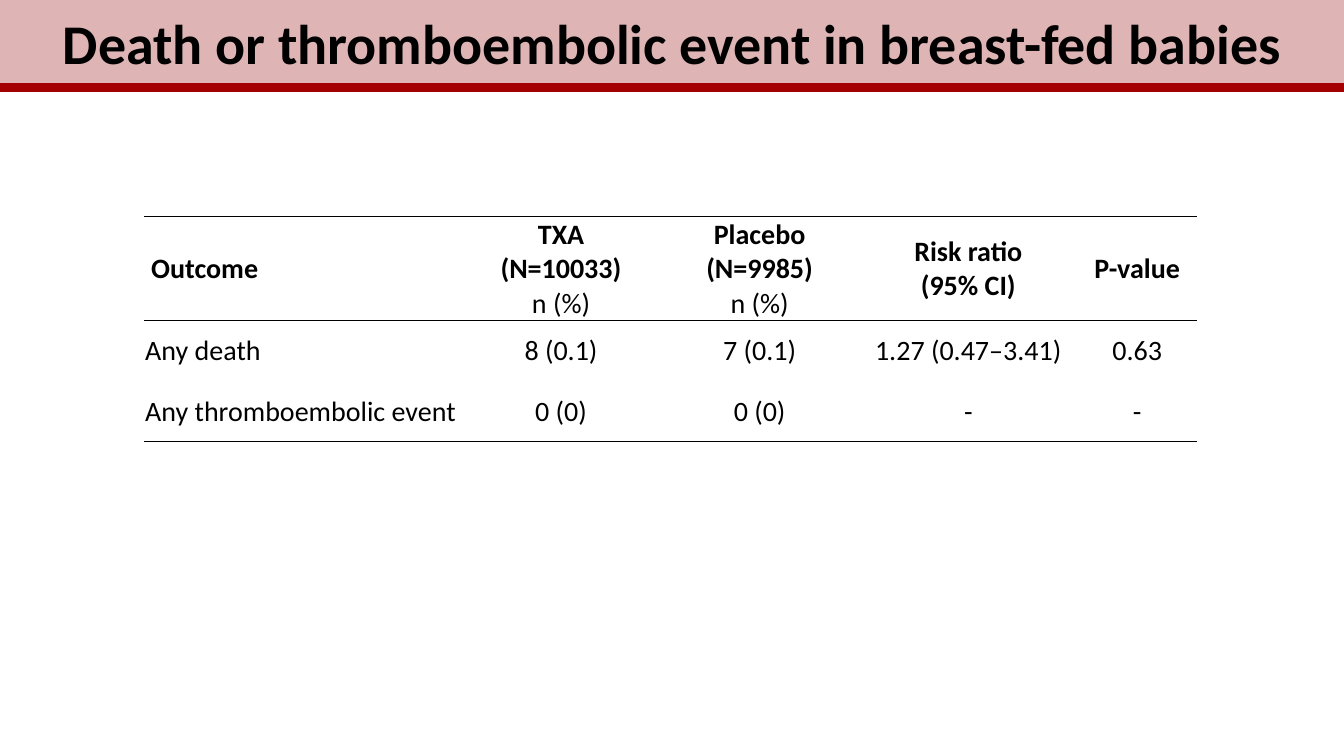
"""Build the slide on death or thromboembolic events in breast-fed babies."""
import lxml.etree
import pptx
import pptx.dml.color
import pptx.enum.shapes
import pptx.enum.text
import pptx.oxml.ns
import pptx.util

Inches = pptx.util.Inches
Pt = pptx.util.Pt
qn = pptx.oxml.ns.qn
ALIGN = pptx.enum.text.PP_ALIGN
MIDDLE = pptx.enum.text.MSO_ANCHOR.MIDDLE
COLORS = {"text": "000000", "banner": "DEB4B4", "rule": "A40000"}


def color(name):
    return pptx.dml.color.RGBColor.from_string(COLORS[name])


def add_text(para, text, size, bold, align):
    para.alignment = align
    span = para.add_run()
    span.text = text
    span.font.name = "Calibri"
    span.font.size = Pt(size)
    span.font.bold = bold
    span.font.color.rgb = color("text")


deck = pptx.Presentation()
deck.slide_width = Inches(13.33)
deck.slide_height = Inches(7.5)
page = deck.slides.add_slide(deck.slide_layouts[6])

column_widths = [3.15, 1.97, 1.97, 2.17, 1.18]
row_heights = [1.03, 0.6, 0.6]
rule_widths = [0.75, 0.75, 0, 1]
rows = [
    [["Outcome"], ["TXA", "(N=10033)", "n (%)"], ["Placebo (N=9985)", "n (%)"],
     ["Risk ratio", "(95% CI)"], ["P-value"]],
    [["Any death"], ["8 (0.1)"], ["7 (0.1)"], ["1.27 (0.47–3.41)"], ["0.63"]],
    [["Any thromboembolic event"], ["0 (0)"], ["0 (0)"], ["-"], ["-"]],
]
table = page.shapes.add_table(
    len(rows), len(column_widths), Inches(1.43), Inches(2.15),
    Inches(sum(column_widths)), Inches(sum(row_heights))).table
table.first_row = False
table.horz_banding = False
for column, width in zip(table.columns, column_widths):
    column.width = Inches(width)
for row, height in zip(table.rows, row_heights):
    row.height = Inches(height)

for row_index, row in enumerate(rows):
    for column_index, lines in enumerate(row):
        cell = table.cell(row_index, column_index)
        cell.vertical_anchor = MIDDLE
        is_outcome = row_index == 0 and column_index == 0
        cell.margin_left = Inches(0.07 if is_outcome else 0.01)
        cell.margin_right = cell.margin_top = Inches(0.01)
        cell.margin_bottom = 0
        cell.fill.background()
        for line_index, line in enumerate(lines):
            frame = cell.text_frame
            para = frame.paragraphs[0] if line_index == 0 else frame.add_paragraph()
            add_text(para, line, 20, row_index == 0 and line != "n (%)",
                     ALIGN.CENTER if column_index else ALIGN.LEFT)
        borders = {"lnL": 0, "lnR": 0, "lnT": rule_widths[row_index],
                   "lnB": rule_widths[row_index + 1]}
        properties = cell._tc.get_or_add_tcPr()
        for position, (side, width) in enumerate(borders.items()):
            border = lxml.etree.Element(qn("a:" + side), w=str(Pt(width)))
            if width:
                fill = lxml.etree.SubElement(border, qn("a:solidFill"))
                lxml.etree.SubElement(fill, qn("a:srgbClr"), val=COLORS["text"])
            else:
                lxml.etree.SubElement(border, qn("a:noFill"))
            properties.insert(position, border)

banner = page.shapes.add_shape(
    pptx.enum.shapes.MSO_SHAPE.RECTANGLE, 0, 0, deck.slide_width, Inches(0.91))
banner.shadow.inherit = False
banner.fill.solid()
banner.fill.fore_color.rgb = color("banner")
banner.line.fill.background()
banner.text_frame.word_wrap = True
banner.text_frame.vertical_anchor = MIDDLE
title = banner.text_frame.paragraphs[0]
title.line_spacing = 0.9
add_text(title, "Death or thromboembolic event in breast-fed babies", 40, True, ALIGN.CENTER)

rule = page.shapes.add_connector(
    pptx.enum.shapes.MSO_CONNECTOR.STRAIGHT,
    Inches(-0.01), Inches(0.87), Inches(13.33), Inches(0.87))
rule.line.color.rgb = color("rule")
rule.line.width = Pt(6)
lxml.etree.SubElement(rule._element.spPr, qn("a:effectLst"))

deck.save("out.pptx")
